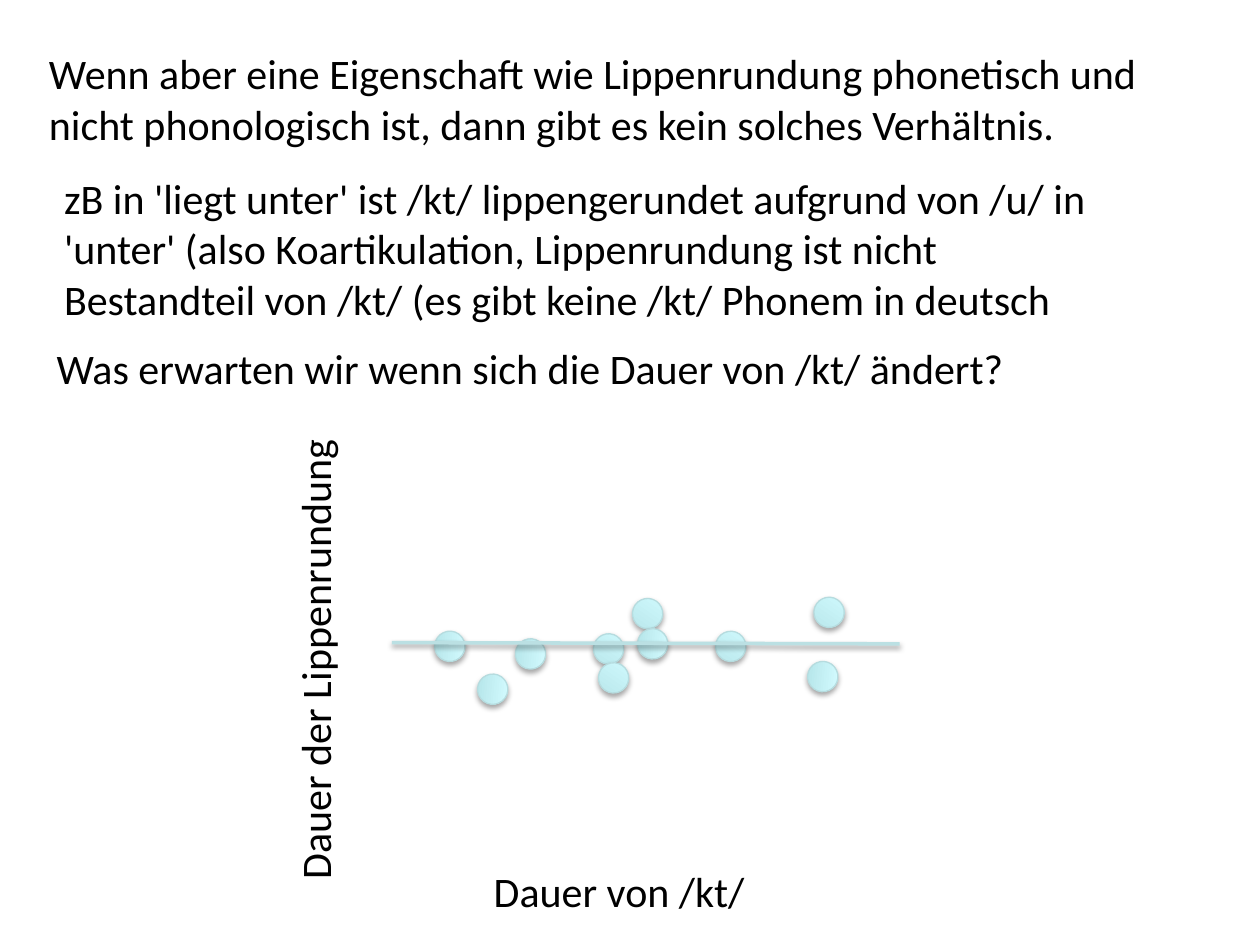
"""Build a slide on lip rounding with a flat scatter of dots."""
import lxml.etree
import pptx
import pptx.dml.color
import pptx.enum.shapes
import pptx.enum.text
import pptx.oxml
import pptx.oxml.ns
import pptx.util

Inches = pptx.util.Inches
Pt = pptx.util.Pt
RGB = pptx.dml.color.RGBColor.from_string
COLORS = {"text": "000000", "low": "B5E5E9", "high": "D3FBFF",
          "edge": "B6DCDF", "trend": "BBE0E3", "shade": "000000"}

deck = pptx.Presentation()
deck.slide_width, deck.slide_height = Inches(10), Inches(7.5)
slide = deck.slides.add_slide(deck.slide_layouts[6])


def write(text, box, size=24, font="Calibri", color="text", wrap=True, turn=0):
    label = slide.shapes.add_textbox(*map(Inches, box))
    label.rotation = turn
    frame = label.text_frame
    frame.word_wrap = wrap
    frame.auto_size = pptx.enum.text.MSO_AUTO_SIZE.SHAPE_TO_FIT_TEXT
    run = frame.paragraphs[0].add_run()
    run.text = text
    run.font.name = font
    run.font.size = Pt(size)
    run.font.color.rgb = RGB(COLORS[color])


def shade(item, alpha, drop):
    item._element.spPr.append(pptx.oxml.parse_xml(
        f'<a:effectLst {pptx.oxml.ns.nsdecls("a")}>'
        f'<a:outerShdw blurRad="{Pt(3.1)}" dist="{Pt(drop)}" dir="5400000" rotWithShape="0">'
        f'<a:srgbClr val="{COLORS["shade"]}"><a:alpha val="{alpha * 1000}"/></a:srgbClr>'
        '</a:outerShdw></a:effectLst>'))


write("Wenn aber eine Eigenschaft wie Lippenrundung phonetisch und nicht "
      "phonologisch ist, dann gibt es kein solches Verhältnis.", (0.29, 0.33, 9.06, 0.91))
write("zB in 'liegt unter' ist /kt/ lippengerundet aufgrund von /u/ in 'unter' "
      "(also Koartikulation, Lippenrundung ist nicht Bestandteil von /kt/ "
      "(es gibt keine /kt/ Phonem in deutsch", (0.41, 1.32, 8.49, 1.31))
write("Was erwarten wir wenn sich die Dauer von /kt/ ändert?", (0.35, 2.67, 8.99, 0.5))
write("Dauer von /kt/", (3.82, 6.82, 2.21, 0.5), wrap=False)
write("Dauer der Lippenrundung", (0.63, 4.96, 3.73, 0.5), wrap=False, turn=270)

plot = slide.shapes.add_group_shape()
dots = [(5.02, 4.75, 34.9), (4.71, 5.03, 34.9), (5.06, 4.99, 95.4), (4.09, 5.07, 95.4),
        (5.68, 5.01, 34.9), (4.75, 5.26, 34.9), (6.41, 5.25, 95.4), (3.79, 5.35, 95.4),
        (3.45, 5.01, 95.4), (6.46, 4.74, 34.9)]
for left, top, turn in dots:
    dot = plot.shapes.add_shape(pptx.enum.shapes.MSO_SHAPE.OVAL, Inches(left), Inches(top),
                                Inches(0.24), Inches(0.24))
    dot.rotation = turn
    dot.fill.gradient()
    dot.fill.gradient_angle = 90
    for stop, name in zip(dot.fill.gradient_stops, ("low", "high")):
        stop.color.rgb = RGB(COLORS[name])
    dot.line.color.rgb = RGB(COLORS["edge"])
    dot.line.width = Pt(0.75)
    shade(dot, 35, 1.8)

trend = plot.shapes.add_connector(pptx.enum.shapes.MSO_CONNECTOR.STRAIGHT, Inches(3.11),
                                  Inches(5.1), Inches(7.14), Inches(5.11))
trend.line.color.rgb = RGB(COLORS["trend"])
trend.line.width = Pt(2)
shade(trend, 38, 1.6)

deck.save("out.pptx")
